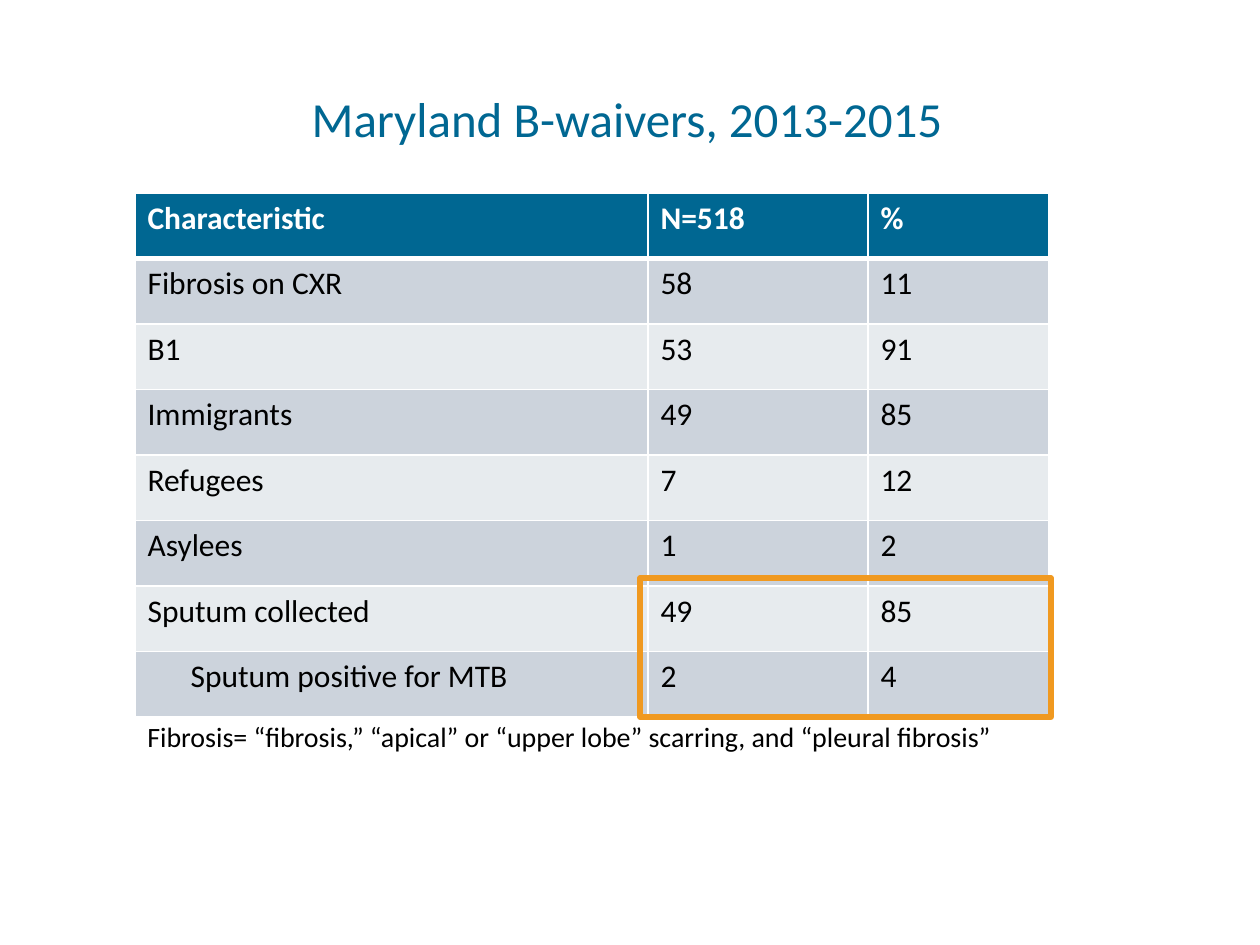
from lxml import etree
from pptx import Presentation
from pptx.dml.color import RGBColor
from pptx.enum.shapes import MSO_SHAPE
from pptx.enum.text import MSO_ANCHOR, PP_ALIGN
from pptx.oxml.ns import qn
from pptx.util import Emu, Pt

RECT = MSO_SHAPE.RECTANGLE
TOP, BOTTOM = MSO_ANCHOR.TOP, MSO_ANCHOR.BOTTOM
LEFT, CENTER = PP_ALIGN.LEFT, PP_ALIGN.CENTER

FONT = "Calibri"
BLUE, ORANGE, WHITE, BLACK = "006792", "F09920", "FFFFFF", "000000"
BANDS = ("E7EBEE", "CCD3DC")
COLUMNS = (513, 220, 181)
INDENT = 43
ROWS = (
    ("Characteristic", "N=518", "%"),
    ("Fibrosis on CXR", "58", "11"),
    ("B1", "53", "91"),
    ("Immigrants", "49", "85"),
    ("Refugees", "7", "12"),
    ("Asylees", "1", "2"),
    ("Sputum collected", "49", "85"),
    ("Sputum positive for MTB", "2", "4"),
)


def px(n):
    """Turn pixels into EMU."""
    return Emu(round(n * 914400 / 126))


def rgb(color):
    """Turn a hex string into a colour."""
    return RGBColor.from_string(color)


def add_run(p, text, size, color, bold=False):
    """Add a formatted run to a paragraph."""
    r = p.add_run()
    r.text = text
    r.font.name = FONT
    r.font.size = Pt(size)
    r.font.bold = bold
    r.font.color.rgb = rgb(color)


def add_text(s, box, text, size, color, align=LEFT, anchor=TOP):
    """Add a wrapped one-paragraph text box."""
    tf = s.shapes.add_textbox(*map(px, box)).text_frame
    tf.word_wrap = True
    tf.vertical_anchor = anchor
    p = tf.paragraphs[0]
    p.alignment = align
    p.line_spacing = 0.9
    add_run(p, text, size, color)


def set_borders(cell, top, bottom):
    """Give a cell white borders with the given top and bottom points."""
    tc_pr = cell._tc.get_or_add_tcPr()
    widths = {"a:lnL": 1, "a:lnR": 1, "a:lnT": top, "a:lnB": bottom}
    for i, (tag, width) in enumerate(widths.items()):
        ln = etree.Element(qn(tag), w=str(Pt(width)))
        fill = etree.SubElement(ln, qn("a:solidFill"))
        etree.SubElement(fill, qn("a:srgbClr"), val=WHITE)
        tc_pr.insert(i, ln)


def add_table(s, box):
    """Add the banded table with its header row."""
    table = s.shapes.add_table(len(ROWS), len(COLUMNS), *map(px, box)).table
    for column, width in zip(table.columns, COLUMNS):
        column.width = px(width)
    for i, row in enumerate(ROWS):
        header = i == 0
        for j, text in enumerate(row):
            cell = table.cell(i, j)
            cell.fill.solid()
            cell.fill.fore_color.rgb = rgb(BLUE if header else BANDS[i % 2])
            set_borders(cell, 3 if i == 1 else 1, 3 if header else 1)
            p = cell.text_frame.paragraphs[0]
            add_run(p, text, 18, WHITE if header else BLACK, header)
    sub_row = table.cell(len(ROWS) - 1, 0).text_frame.paragraphs[0]
    sub_row._p.get_or_add_pPr().set("marL", str(px(INDENT)))


def add_frame(s, box, color, width):
    """Add an unfilled rectangle outline."""
    sp = s.shapes.add_shape(RECT, *map(px, box))
    sp.shadow.inherit = False
    sp.fill.background()
    sp.line.color.rgb = rgb(color)
    sp.line.width = Pt(width)


def main():
    """Build and save the slide."""
    prs = Presentation()
    prs.slide_width, prs.slide_height = px(1260), px(945)
    s = prs.slides.add_slide(prs.slide_layouts[6])
    add_text(s, (44, 57, 1166, 97), "Maryland B-waivers, 2013-2015",
             28, BLUE, CENTER, BOTTOM)
    add_text(s, (135, 717, 1166, 47),
             "Fibrosis= “fibrosis,” “apical” or “upper lobe” scarring, "
             "and “pleural fibrosis”", 16, BLACK)
    add_table(s, (135, 193, sum(COLUMNS), 524))
    add_frame(s, (640, 578, 411, 139), ORANGE, 3)
    prs.save("out.pptx")


if __name__ == "__main__":
    main()
